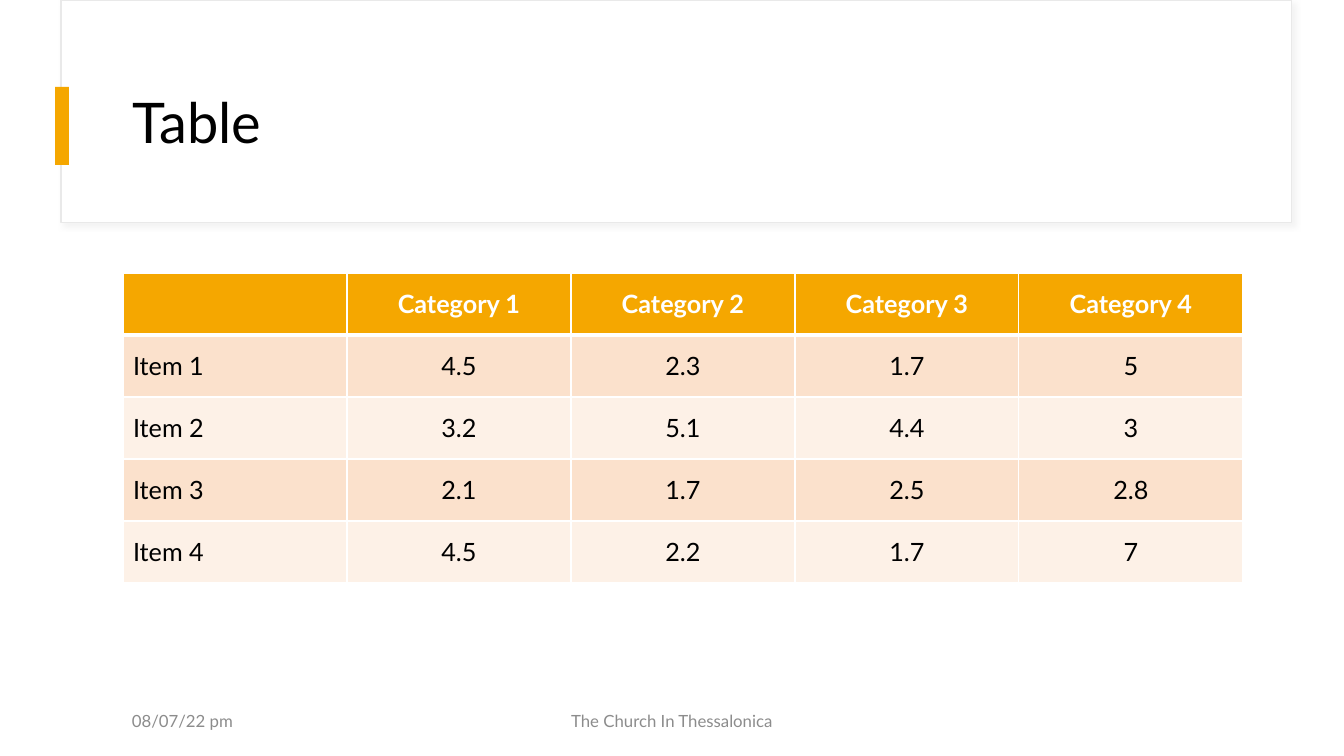
from dataclasses import dataclass

from lxml.etree import SubElement
from pptx import Presentation
from pptx.dml.color import RGBColor
from pptx.enum.shapes import MSO_SHAPE
from pptx.enum.text import MSO_ANCHOR, PP_ALIGN
from pptx.oxml.ns import qn
from pptx.util import Emu, Pt


@dataclass(frozen=True)
class Theme:
    font: str = "Lato"
    white: str = "FFFFFF"
    black: str = "000000"
    gold: str = "F5A700"
    edge: str = "E9E9E9"
    shade: str = "D9D9D9"
    grey: str = "8C8C8C"
    bands: tuple = ("FBE1CC", "FDF1E7")
    title: int = 40
    body: int = 18
    small: int = 12


THEME = Theme()
SCALE = 914400 / 100.8
ROWS = (
    ("", "Category 1", "Category 2", "Category 3", "Category 4"),
    ("Item 1", "4.5", "2.3", "1.7", "5"),
    ("Item 2", "3.2", "5.1", "4.4", "3"),
    ("Item 3", "2.1", "1.7", "2.5", "2.8"),
    ("Item 4", "4.5", "2.2", "1.7", "7"),
)


def px(count):
    return Emu(round(count * SCALE))


def rgb(code):
    return RGBColor.from_string(code)


def write(frame, text, size=THEME.body, color=THEME.black, bold=False,
          align=PP_ALIGN.LEFT, space=None):
    para = frame.paragraphs[0]
    para.alignment = align
    para.line_spacing = space
    para.font.size = Pt(size)
    if text:
        run = para.add_run()
        run.text = text
        font = run.font
        font.name, font.size, font.bold = THEME.font, Pt(size), bold
        font.color.rgb = rgb(color)


def label(slide, box, text, **style):
    frame = slide.shapes.add_textbox(*map(px, box)).text_frame
    frame.word_wrap = True
    frame.vertical_anchor = MSO_ANCHOR.MIDDLE
    write(frame, text, **style)


def block(slide, box, fill, line=None):
    shape = slide.shapes.add_shape(MSO_SHAPE.RECTANGLE, *map(px, box))
    shape.shadow.inherit = False
    shape.fill.solid()
    shape.fill.fore_color.rgb = rgb(fill)
    if line:
        shape.line.color.rgb = rgb(line)
        shape.line.width = Pt(0.75)
    else:
        shape.line.fill.background()
    return shape


def shadow(shape, color):
    effects = shape._element.spPr.find(qn("a:effectLst"))
    outer = SubElement(effects, qn("a:outerShdw"), blurRad=str(Pt(4)),
                       dist=str(Pt(3)), dir=str(45 * 60000),
                       algn="tl", rotWithShape="0")
    tint = SubElement(outer, qn("a:srgbClr"), val=color)
    SubElement(tint, qn("a:alpha"), val="30000")


def border(cell, top, bottom):
    props = cell._tc.get_or_add_tcPr()
    for side, width in (("L", 1), ("R", 1), ("T", top), ("B", bottom)):
        line = SubElement(props, qn(f"a:ln{side}"), w=str(Pt(width)))
        fill = SubElement(line, qn("a:solidFill"))
        SubElement(fill, qn("a:srgbClr"), val=THEME.white)


def grid(slide, left, top, width, height):
    shape = slide.shapes.add_table(
        len(ROWS), len(ROWS[0]), px(left), px(top),
        px(width * len(ROWS[0])), px(height * len(ROWS)))
    table = shape.table
    table.horz_banding = False
    for col in table.columns:
        col.width = px(width)
    for y, items in enumerate(ROWS):
        table.rows[y].height = px(height)
        head = y == 0
        for x, text in enumerate(items):
            cell = table.cell(y, x)
            cell.vertical_anchor = MSO_ANCHOR.MIDDLE
            border(cell, 3 if y == 1 else 1, 3 if head else 1)
            cell.fill.solid()
            cell.fill.fore_color.rgb = rgb(
                THEME.gold if head else THEME.bands[(y - 1) % 2])
            write(cell.text_frame, text, bold=head,
                  color=THEME.white if head else THEME.black,
                  align=PP_ALIGN.CENTER if x else PP_ALIGN.LEFT)


def main():
    deck = Presentation()
    deck.slide_width, deck.slide_height = px(1344), px(756)
    slide = deck.slides.add_slide(deck.slide_layouts[6])
    panel = block(slide, (61, 0, 1231, 223), THEME.white, THEME.edge)
    shadow(panel, THEME.shade)
    block(slide, (55, 87, 14, 78), THEME.gold)
    label(slide, (123, 60, 1121, 130), "Table", size=THEME.title, space=0.9)
    grid(slide, 123, 273, 224, 62)
    foot = {"size": THEME.small, "color": THEME.grey}
    label(slide, (122, 701, 302, 40), "08/07/22 pm", **foot)
    label(slide, (445, 701, 454, 40), "The Church In Thessalonica",
          align=PP_ALIGN.CENTER, **foot)
    deck.save("out.pptx")


if __name__ == "__main__":
    main()
